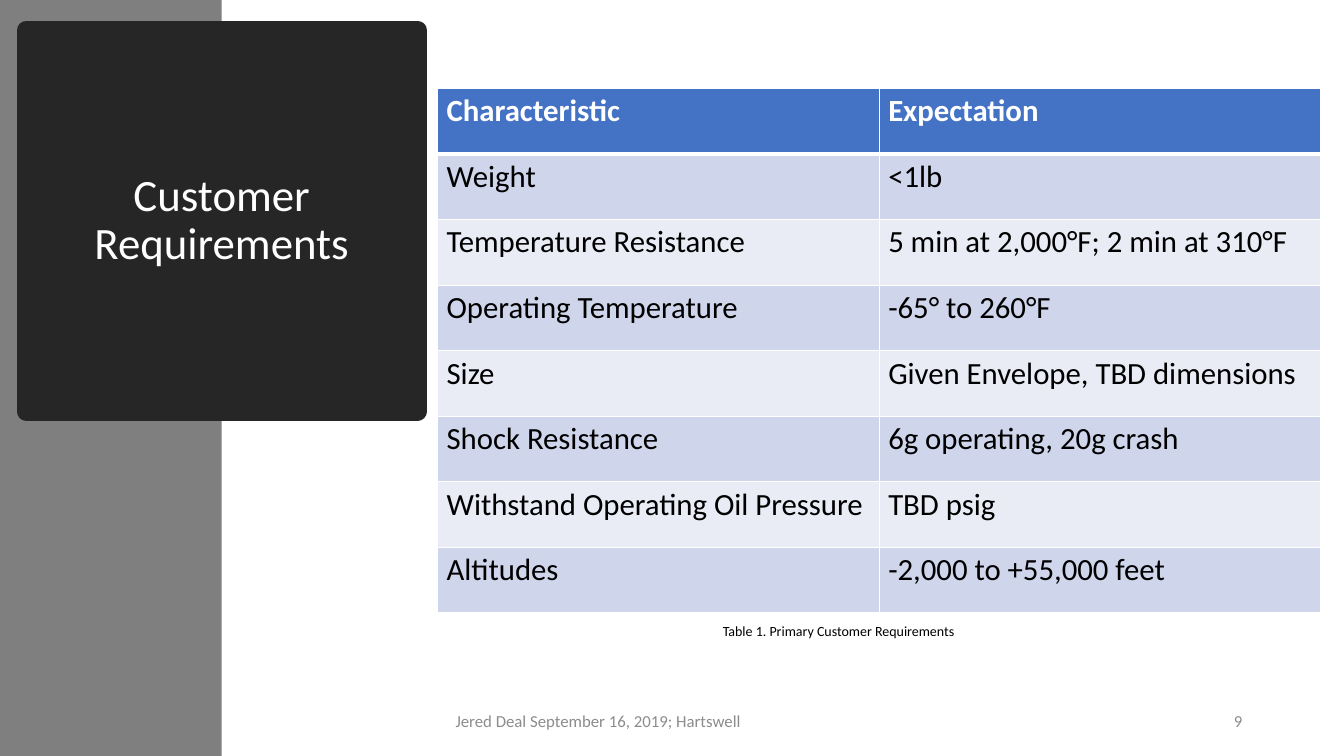
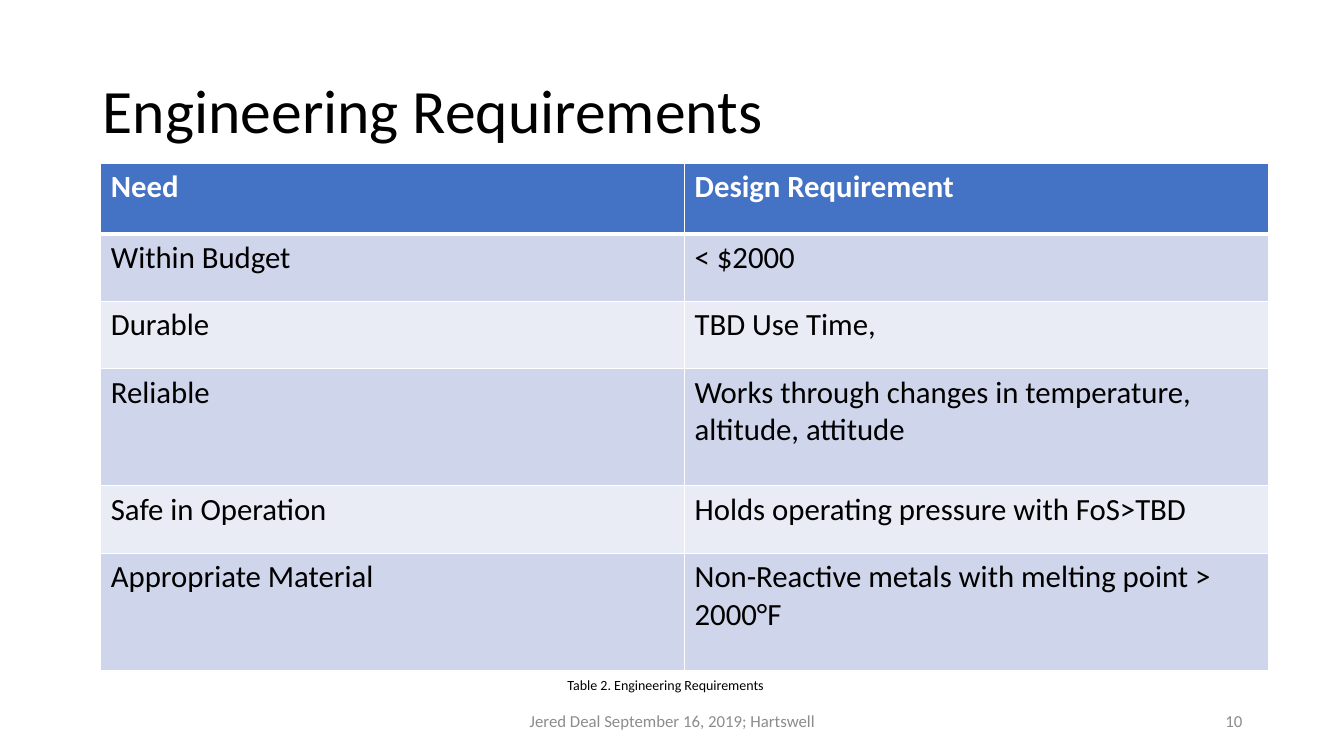
from dataclasses import dataclass
from typing import Optional

from lxml.etree import SubElement
from pptx import Presentation
from pptx.dml.color import RGBColor
from pptx.enum.shapes import MSO_SHAPE
from pptx.enum.text import MSO_ANCHOR, MSO_AUTO_SIZE, PP_ALIGN
from pptx.oxml.ns import qn
from pptx.util import Inches, Pt

# Shared look
COLORS = {
    "white": "FFFFFF",
    "black": "000000",
    "side_band": "7F7F7F",
    "title_card": "262626",
    "footer": "8C8C8C",
    "header_row": "4472C4",
    "odd_row": "CFD5EA",
    "even_row": "E9EBF5",
}
FONT = "Calibri"
FOOTER_TEXT = "Jered Deal September 16, 2019; Hartswell"
FOOTER_TOP, FOOTER_HEIGHT = 6.95, 0.4
FOOTER_LEFT, FOOTER_RIGHT = 4.42, 12.42
TITLE_ONLY_LAYOUT = 5


@dataclass(frozen=True)
class Area:
    left: float
    top: float
    width: float
    height: float

    def lengths(self) -> tuple:
        return tuple(map(Inches, (self.left, self.top, self.width, self.height)))


@dataclass(frozen=True)
class TextStyle:
    size: float
    color: str = "black"
    bold: bool = False
    align: PP_ALIGN = PP_ALIGN.LEFT
    anchor: MSO_ANCHOR = MSO_ANCHOR.TOP
    line_spacing: Optional[float] = None


@dataclass(frozen=True)
class RequirementTable:
    left: float
    top: float
    column_width: float
    row_heights: list
    rows: list
    side_margin: float = 0.1
    top_margin: float = 0.05


@dataclass(frozen=True)
class RequirementPage:
    number: int
    title: str
    title_area: Area
    title_style: TextStyle
    table: RequirementTable
    caption: str
    caption_area: Area
    footer_width: float
    footer_align: PP_ALIGN
    number_width: float
    title_card: bool = False


HEADER_STYLE = TextStyle(22, "white", bold=True)
CELL_STYLE = TextStyle(22)
CAPTION_STYLE = TextStyle(10)

PAGES = [
    RequirementPage(
        number=9,
        title="Customer Requirements",
        title_area=Area(0.26, 0.3, 3.88, 3.78),
        title_style=TextStyle(32, "white", align=PP_ALIGN.CENTER,
                              anchor=MSO_ANCHOR.MIDDLE, line_spacing=0.9),
        title_card=True,
        table=RequirementTable(
            4.34, 0.88, 4.38, [0.65] * 8,
            [
                ("Characteristic", "Expectation"),
                ("Weight", "<1lb"),
                ("Temperature Resistance", "5 min at 2,000°F; 2 min at 310°F"),
                ("Operating Temperature", "-65° to 260°F"),
                ("Size", "Given Envelope, TBD dimensions"),
                ("Shock Resistance", "6g operating, 20g crash"),
                ("Withstand Operating Oil Pressure", "TBD psig"),
                ("Altitudes", "-2,000 to +55,000 feet"),
            ],
            side_margin=0.09, top_margin=0.04,
        ),
        caption="Table 1. Primary Customer Requirements",
        caption_area=Area(7.07, 6.13, 4.11, 0.27),
        footer_width=5.3,
        footer_align=PP_ALIGN.LEFT,
        number_width=1.61,
    ),
    RequirementPage(
        number=10,
        title="Engineering Requirements",
        title_area=Area(0.92, 0.4, 11.5, 1.45),
        title_style=TextStyle(44, anchor=MSO_ANCHOR.MIDDLE, line_spacing=0.9),
        table=RequirementTable(
            1, 1.62, 5.79, [0.7, 0.67, 0.67, 1.16, 0.67, 1.16],
            [
                ("Need", "Design Requirement"),
                ("Within Budget", "< $2000"),
                ("Durable", "TBD Use Time,"),
                ("Reliable", "Works through changes in temperature, altitude, attitude"),
                ("Safe in Operation", "Holds operating pressure with FoS>TBD"),
                ("Appropriate Material", "Non-Reactive metals with melting point > 2000°F"),
            ],
        ),
        caption="Table 2. Engineering Requirements",
        caption_area=Area(5.53, 6.66, 3.38, 0.27),
        footer_width=4.5,
        footer_align=PP_ALIGN.CENTER,
        number_width=3,
    ),
]


def color(name: str) -> RGBColor:
    return RGBColor.from_string(COLORS[name])


def write_text(frame, text: str, style: TextStyle) -> None:
    frame.text = text
    for para in frame.paragraphs:
        para.alignment = style.align
        if style.line_spacing:
            para.line_spacing = style.line_spacing
        for span in para.runs:
            span.font.name = FONT
            span.font.size = Pt(style.size)
            span.font.bold = style.bold
            span.font.color.rgb = color(style.color)


def add_text(page, area: Area, text: str, style: TextStyle) -> None:
    box = page.shapes.add_textbox(*area.lengths())
    box.text_frame.word_wrap = True
    box.text_frame.vertical_anchor = style.anchor
    write_text(box.text_frame, text, style)


def add_title(page, content: RequirementPage) -> None:
    title = page.shapes.title
    title.left, title.top, title.width, title.height = content.title_area.lengths()
    frame = title.text_frame
    frame.word_wrap = True
    frame.auto_size = MSO_AUTO_SIZE.NONE
    frame.vertical_anchor = content.title_style.anchor
    write_text(frame, content.title, content.title_style)

    # Dark card over a grey side band
    if content.title_card:
        title.fill.solid()
        title.fill.fore_color.rgb = color("title_card")
        title.line.color.rgb = color("title_card")
        title.line.width = Pt(13.75)
        band = page.shapes.add_shape(MSO_SHAPE.RECTANGLE, *Area(0, 0, 2.2, 7.5).lengths())
        band.shadow.inherit = False
        band.fill.solid()
        band.fill.fore_color.rgb = color("side_band")
        band.line.fill.background()
        title.element.addprevious(band.element)


def set_borders(cell, top: float, bottom: float) -> None:
    properties = cell._tc.get_or_add_tcPr()
    for side, width in (("L", 1), ("R", 1), ("T", top), ("B", bottom)):
        line = SubElement(properties, qn(f"a:ln{side}"), w=str(Pt(width)))
        fill = SubElement(line, qn("a:solidFill"))
        SubElement(fill, qn("a:srgbClr"), val=COLORS["white"])


def add_table(page, content: RequirementTable) -> None:
    columns = len(content.rows[0])
    area = Area(content.left, content.top, content.column_width * columns,
                sum(content.row_heights))
    table = page.shapes.add_table(len(content.rows), columns, *area.lengths()).table
    for column in table.columns:
        column.width = Inches(content.column_width)

    for index, (height, texts) in enumerate(zip(content.row_heights, content.rows)):
        table.rows[index].height = Inches(height)
        is_header = index == 0
        fill = "header_row" if is_header else "odd_row" if index % 2 else "even_row"
        for cell, text in zip(table.rows[index].cells, texts):
            # The rule under the header is thicker
            set_borders(cell, top=3 if index == 1 else 1, bottom=3 if is_header else 1)
            cell.fill.solid()
            cell.fill.fore_color.rgb = color(fill)
            cell.margin_left = cell.margin_right = Inches(content.side_margin)
            cell.margin_top = cell.margin_bottom = Inches(content.top_margin)
            write_text(cell.text_frame, text, HEADER_STYLE if is_header else CELL_STYLE)


def add_footer(page, content: RequirementPage) -> None:
    number_left = FOOTER_RIGHT - content.number_width
    for left, width, text, align in (
        (FOOTER_LEFT, content.footer_width, FOOTER_TEXT, content.footer_align),
        (number_left, content.number_width, str(content.number), PP_ALIGN.RIGHT),
    ):
        style = TextStyle(12, "footer", align=align, anchor=MSO_ANCHOR.MIDDLE)
        add_text(page, Area(left, FOOTER_TOP, width, FOOTER_HEIGHT), text, style)


def main() -> None:
    deck = Presentation()
    deck.slide_width, deck.slide_height = Inches(13.33), Inches(7.5)
    for content in PAGES:
        page = deck.slides.add_slide(deck.slide_layouts[TITLE_ONLY_LAYOUT])
        add_title(page, content)
        add_footer(page, content)
        add_table(page, content.table)
        add_text(page, content.caption_area, content.caption, CAPTION_STYLE)
    deck.save("out.pptx")


if __name__ == "__main__":
    main()
